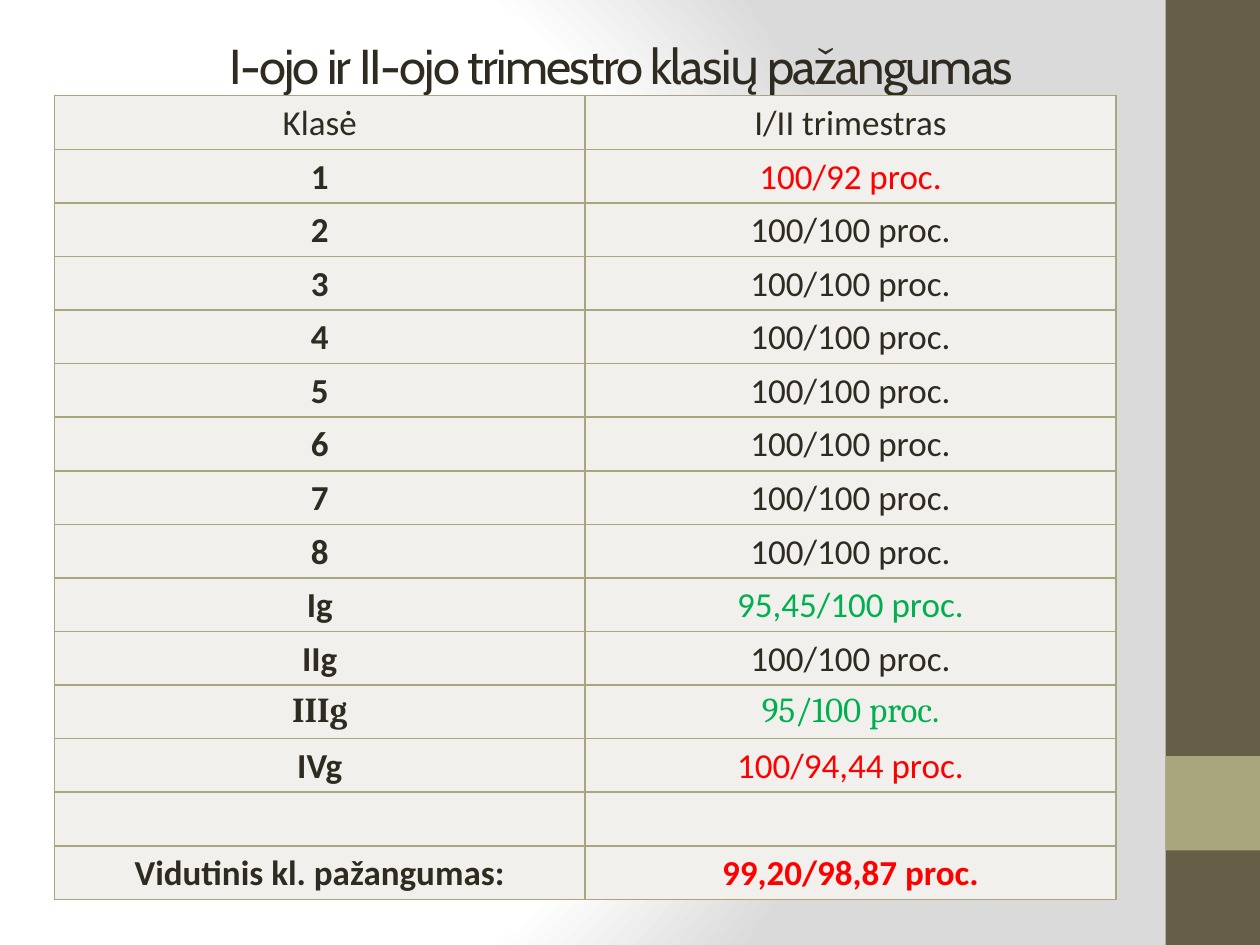
"""Build the slide of class progress for the first and second trimesters."""
from dataclasses import dataclass

from pptx import Presentation
from pptx import util as u
from pptx.dml.color import RGBColor
from pptx.enum import shapes, text
from pptx.oxml import parse_xml
from pptx.oxml.ns import nsdecls, qn

INK, RED, GREEN = "2F2B20", "FF0000", "00B050"
OLIVE, SAND, PALE = "675E47", "A9A57C", "F1F0EC"


@dataclass
class Band:
    top: float
    height: float
    color: str


@dataclass
class Row:
    label: str
    value: str = "100/100 proc."
    color: str = INK
    font: str = "Calibri"
    label_bold: bool = True
    value_bold: bool = False


BANDS = [Band(0, 540, OLIVE), Band(432, 54, SAND)]
ROWS = [
    Row("Klasė", "I/II trimestras", label_bold=False),
    Row("1", "100/92 proc.", RED),
    *(Row(str(n)) for n in range(2, 9)),
    Row("Ig", "95,45/100 proc.", GREEN),
    Row("IIg"),
    Row("IIIg", "95/100 proc.", GREEN, "Cambria"),
    Row("IVg", "100/94,44 proc.", RED),
    Row("", ""),
    Row("Vidutinis kl. pažangumas:", "99,20/98,87 proc.", RED, value_bold=True),
]


def rgb(color: str) -> RGBColor:
    return RGBColor.from_string(color)


def style(p, size: float, font: str, color: str, bold: bool = False) -> None:
    p.alignment = text.PP_ALIGN.CENTER
    p.font.size, p.font.name, p.font.bold = u.Pt(size), font, bold
    p.font.color.rgb = rgb(color)


def set_background(s) -> None:
    s.background.fill.solid()
    bg = s.element.find(".//" + qn("p:bgPr"))
    stops = "".join(
        f'<a:gs pos="{pos * 1000}"><a:srgbClr val="{color}"/></a:gs>'
        for pos, color in ((0, "FFFFFF"), (75, "FFFFFF"), (100, "DADADA"))
    )
    gradient = parse_xml(
        f'<a:gradFill {nsdecls("a")} rotWithShape="1"><a:gsLst>{stops}</a:gsLst>'
        '<a:path path="circle"><a:fillToRect l="20000" t="50000" r="100000" b="50000"/>'
        "</a:path></a:gradFill>"
    )
    bg.replace(bg.find(qn("a:solidFill")), gradient)


def add_band(s, band: Band) -> None:
    sp = s.shapes.add_shape(
        shapes.MSO_SHAPE.RECTANGLE, u.Pt(666), u.Pt(band.top), u.Pt(54), u.Pt(band.height)
    )
    sp.shadow.inherit = False
    sp.fill.solid()
    sp.fill.fore_color.rgb = rgb(band.color)
    sp.line.fill.background()


def add_title(s, title: str) -> None:
    tf = s.shapes.add_textbox(u.Pt(31), u.Pt(15), u.Pt(648), u.Pt(44)).text_frame
    tf.word_wrap = True
    tf.vertical_anchor = text.MSO_ANCHOR.MIDDLE
    p = tf.paragraphs[0]
    style(p, 28, "Cabin", INK)
    r = p.add_run()
    r.text = title
    r._r.get_or_add_rPr().set("spc", "-100")


def fill_cell(cell, label: str, font: str, color: str, bold: bool) -> None:
    cell.margin_left = cell.margin_right = u.Pt(5)
    cell.margin_top = cell.margin_bottom = 0
    p = cell.text_frame.paragraphs[0]
    if label:
        p.text = label
    p.line_spacing = 1.15
    style(p, 20, font, color, bold)
    tc_pr = cell._tc.get_or_add_tcPr()
    for side in ("lnL", "lnR", "lnT", "lnB"):
        tc_pr.append(parse_xml(
            f'<a:{side} {nsdecls("a")} w="12700"><a:solidFill>'
            f'<a:srgbClr val="{SAND}"/></a:solidFill></a:{side}>'
        ))
    cell.fill.solid()
    cell.fill.fore_color.rgb = rgb(PALE)


def add_progress_table(s, rows: list[Row]) -> None:
    frame = s.shapes.add_table(
        len(rows), 2, u.Pt(31), u.Pt(54.7), u.Pt(606.8), u.Pt(30.62 * len(rows))
    )
    table = frame.table
    table.first_row = table.horz_banding = False
    for i, row in enumerate(rows):
        fill_cell(table.cell(i, 0), row.label, row.font, INK, row.label_bold)
        fill_cell(table.cell(i, 1), row.value, row.font, row.color, row.value_bold)


def main() -> None:
    prs = Presentation()
    prs.slide_width, prs.slide_height = u.Pt(720), u.Pt(540)
    s = prs.slides.add_slide(prs.slide_layouts[6])
    set_background(s)
    for band in BANDS:
        add_band(s, band)
    add_title(s, "I-ojo ir II-ojo trimestro klasių pažangumas")
    add_progress_table(s, ROWS)
    prs.save("out.pptx")


if __name__ == "__main__":
    main()
